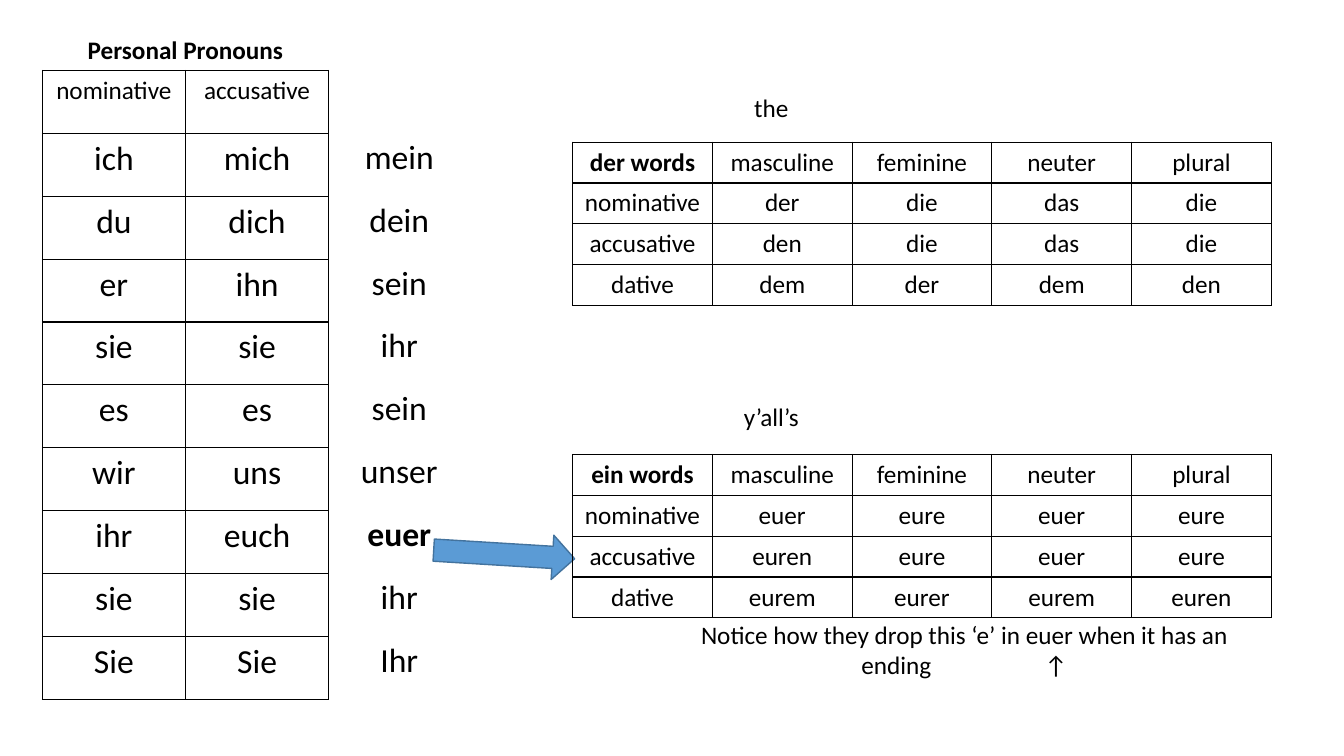
from lxml import etree
from pptx import Presentation
from pptx.dml.color import RGBColor
from pptx.enum.shapes import MSO_SHAPE
from pptx.enum.text import MSO_AUTO_SIZE, PP_ALIGN
from pptx.oxml.ns import qn
from pptx.util import Inches, Pt

CENTER = PP_ALIGN.CENTER
FIT_TEXT = MSO_AUTO_SIZE.SHAPE_TO_FIT_TEXT
LEFT_ARROW = MSO_SHAPE.LEFT_ARROW

THEME = {
    "font": "Calibri",
    "ink": RGBColor(0, 0, 0),
    "arrow_fill": RGBColor(0x5B, 0x9B, 0xD5),
    "arrow_line": RGBColor(0x43, 0x73, 0x9E),
    "border": "000000",
    "label": Pt(18),
    "word": Pt(24),
    "hairline": Pt(1),
}

deck = Presentation()
deck.slide_width = Inches(13.33)
deck.slide_height = Inches(7.5)
slide = deck.slides.add_slide(deck.slide_layouts[6])

PRONOUN_LEFT, PRONOUN_TOP = Inches(0.42), Inches(0.7)
PRONOUN_COL, PRONOUN_ROW = Inches(1.42), Inches(6.24) // 10
POSSESSIVE_LEFT, POSSESSIVE_COL = Inches(3.33), Inches(1.26)
CASE_LEFT, CASE_COL, CASE_ROW = Inches(5.68), Inches(6.93) // 5, Inches(1.62) // 4
CAPTION_WIDTH, CAPTION_HEIGHT = Inches(2.76), Inches(0.4)


def add_run(paragraph, text, size, bold=False):
    paragraph.alignment = CENTER
    run = paragraph.add_run()
    run.text = text
    run.font.name = THEME["font"]
    run.font.size = size
    run.font.bold = bold
    run.font.color.rgb = THEME["ink"]
    return run


def add_grid(rows, left, top, col_width, row_height, bold_words, label_rows, bordered=True):
    columns = len(rows[0])
    table = slide.shapes.add_table(len(rows), columns, left, top,
                                   col_width * columns, row_height * len(rows)).table
    table.first_row = table.horz_banding = False
    for column in table.columns:
        column.width = col_width
    for r, words in enumerate(rows):
        table.rows[r].height = row_height
        for c, word in enumerate(words):
            cell = table.cell(r, c)
            size = THEME["label"] if r < label_rows else THEME["word"]
            add_run(cell.text_frame.paragraphs[0], word, size, word in bold_words)
            if bordered:
                properties = cell._tc.get_or_add_tcPr()
                for side in ("a:lnL", "a:lnR", "a:lnT", "a:lnB"):
                    edge = etree.SubElement(properties, qn(side), w=str(THEME["hairline"]))
                    paint = etree.SubElement(edge, qn("a:solidFill"))
                    etree.SubElement(paint, qn("a:srgbClr"), val=THEME["border"])
            cell.fill.background()


pronouns = [
    ("nominative", "accusative"), ("ich", "mich"), ("du", "dich"), ("er", "ihn"),
    ("sie", "sie"), ("es", "es"), ("wir", "uns"), ("ihr", "euch"), ("sie", "sie"),
    ("Sie", "Sie"),
]
possessives = [(word,) for word in
               ("mein", "dein", "sein", "ihr", "sein", "unser", "euer", "ihr", "Ihr")]
genders = ("masculine", "feminine", "neuter", "plural")
cases = ("nominative", "accusative", "dative")
endings = {
    "ein words": (Inches(4.51), [("euer", "eure", "euer", "eure"),
                                 ("euren", "eure", "euer", "eure"),
                                 ("eurem", "eurer", "eurem", "euren")]),
    "der words": (Inches(1.41), [("der", "die", "das", "die"),
                                 ("den", "die", "das", "die"),
                                 ("dem", "der", "dem", "den")]),
}

add_grid(pronouns, PRONOUN_LEFT, PRONOUN_TOP, PRONOUN_COL, PRONOUN_ROW, (), 1)
add_grid(possessives, POSSESSIVE_LEFT, PRONOUN_TOP + PRONOUN_ROW - Inches(0.01),
         POSSESSIVE_COL, PRONOUN_ROW, ("euer",), 0, bordered=False)

captions = [
    (("Personal Pronouns",), 0.46, 0.29, CAPTION_WIDTH, CAPTION_HEIGHT, True),
    (("the",), 6.27, 0.87, CAPTION_WIDTH, CAPTION_HEIGHT, False),
    (("y’all’s",), 6.27, 3.93, CAPTION_WIDTH, CAPTION_HEIGHT, False),
    (("Notice how they drop this ‘e’ in euer when it has an ending", " ↑"),
     6.72, 6.09, Inches(5.69), Inches(0.71), False),
]
for parts, left, top, width, height, bold in captions:
    frame = slide.shapes.add_textbox(Inches(left), Inches(top), width, height).text_frame
    frame.word_wrap = True
    frame.auto_size = FIT_TEXT
    for part in parts:
        run = add_run(frame.paragraphs[0], part, THEME["label"], bold)
        if part == " ↑":
            run.font._element.set("spc", "7700")

euer_arrow = slide.shapes.add_shape(LEFT_ARROW, Inches(4.3), Inches(5.28),
                                    Inches(1.4), Inches(0.44))
euer_arrow.rotation = 183.5
euer_arrow.shadow.inherit = False
euer_arrow.fill.solid()
euer_arrow.fill.fore_color.rgb = THEME["arrow_fill"]
euer_arrow.line.color.rgb = THEME["arrow_line"]
euer_arrow.line.width = THEME["hairline"]

for title, (top, forms) in endings.items():
    rows = [(title, *genders)] + [(case, *words) for case, words in zip(cases, forms)]
    add_grid(rows, CASE_LEFT, top, CASE_COL, CASE_ROW, (title,), len(rows))

deck.save("out.pptx")
